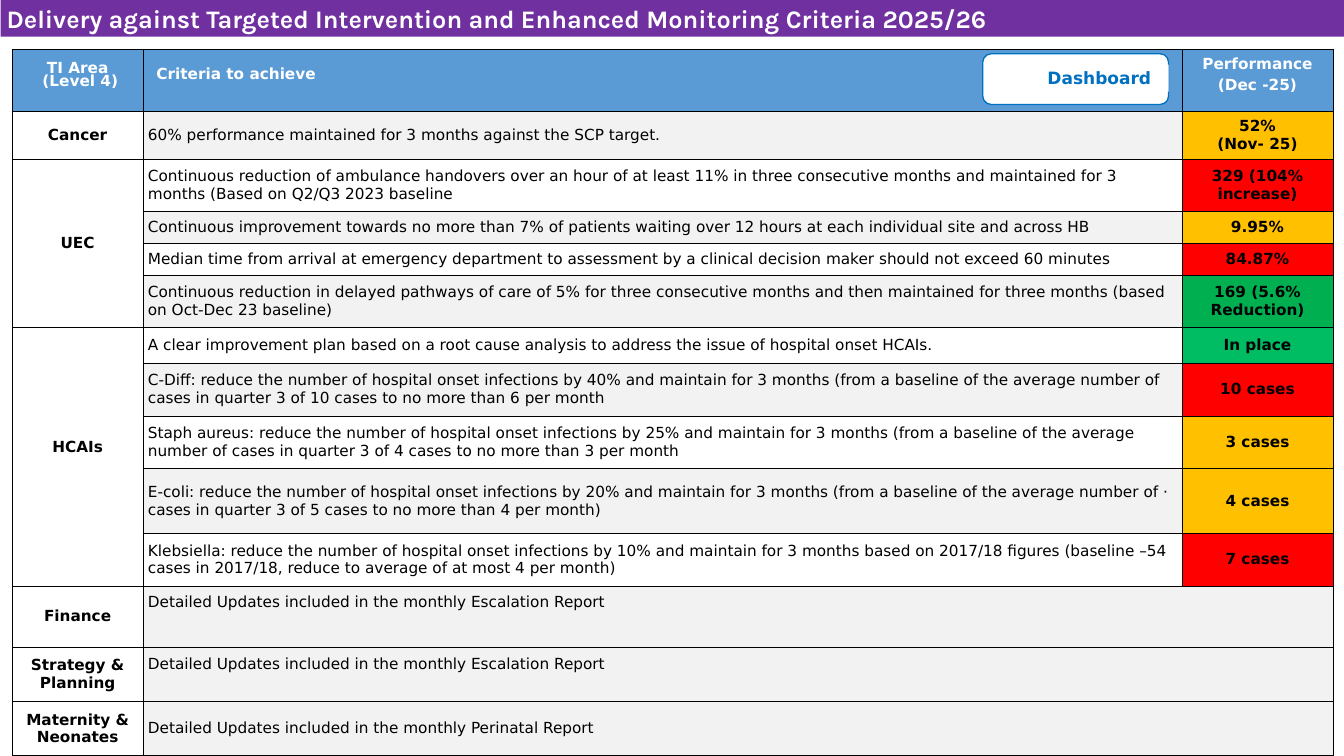
from dataclasses import dataclass
from typing import NamedTuple

from lxml.etree import SubElement
from pptx import Presentation
from pptx.dml.color import RGBColor
from pptx.enum.shapes import MSO_SHAPE
from pptx.enum.text import MSO_ANCHOR, MSO_AUTO_SIZE, PP_ALIGN
from pptx.oxml.ns import qn
from pptx.util import Inches, Pt


@dataclass(frozen=True)
class Theme:
    purple: str = "7030A0"
    header: str = "5B9BD5"
    blue: str = "0070C0"
    band: str = "F2F2F2"
    white: str = "FFFFFF"
    black: str = "000000"
    red: str = "FF0000"
    amber: str = "FFC000"
    green: str = "00B050"
    done: str = "00BC62"
    body_font: str = "DejaVu Sans"
    title_font: str = "Karla"
    body_size: float = 18
    button_size: float = 20
    title_size: float = 29.7


THEME = Theme()


class Criterion(NamedTuple):
    """One table row; a lift raises a text above the middle of its cell."""
    height: float
    area: str
    text: str
    result: str = ""
    status: str = ""
    area_lift: float = 0
    text_lift: float = 0


ESCALATION = "Detailed Updates included in the monthly Escalation Report"
CRITERIA = [
    Criterion(0.79, "Cancer", "60% performance maintained for 3 months against the SCP target.",
              "52%\n(Nov- 25)", THEME.amber),
    Criterion(0.85, "UEC", "Continuous reduction of ambulance handovers over an hour of at least 11% in three "
              "consecutive months and maintained for 3 months (Based on Q2/Q3 2023 baseline",
              "329 (104% increase)", THEME.red),
    Criterion(0.52, "", "Continuous improvement towards no more than 7% of patients waiting over 12 hours "
              "at each individual site and across HB", "9.95%", THEME.amber),
    Criterion(0.52, "", "Median time from arrival at emergency department to assessment by a clinical "
              "decision maker should not exceed 60 minutes", "84.87%", THEME.red),
    Criterion(0.85, "", "Continuous reduction in delayed pathways of care of 5% for three consecutive months "
              "and then maintained for three months (based on Oct-Dec 23 baseline)",
              "169 (5.6% Reduction)", THEME.green),
    Criterion(0.59, "HCAIs", "A clear improvement plan based on a root cause analysis to address the issue "
              "of hospital onset HCAIs.", "In place", THEME.done, area_lift=0.3),
    Criterion(0.87, "", "C-Diff: reduce the number of hospital onset infections by 40% and maintain for 3 months "
              "(from a baseline of the average number of cases in quarter 3 of 10 cases to no more than "
              "6 per month", "10 cases", THEME.red),
    Criterion(0.86, "", "Staph aureus: reduce the number of hospital onset infections by 25% and maintain for "
              "3 months (from a baseline of the average number of cases in quarter 3 of 4 cases to no more "
              "than 3 per month", "3 cases", THEME.amber),
    Criterion(1.06, "", "E-coli: reduce the number of hospital onset infections by 20% and maintain for 3 months "
              "(from a baseline of the average number of · cases in quarter 3 of 5 cases to no more than "
              "4 per month)", "4 cases", THEME.amber),
    Criterion(0.86, "", "Klebsiella: reduce the number of hospital onset infections by 10% and maintain for "
              "3 months based on 2017/18 figures (baseline –54 cases in 2017/18, reduce to average of at most "
              "4 per month)", "7 cases", THEME.red),
    Criterion(0.52, "Finance", ESCALATION),
    Criterion(0.48, "", ""),
    Criterion(0.89, "Strategy & Planning", ESCALATION, text_lift=0.32),
    Criterion(0.89, "Maternity & Neonates", "Detailed Updates included in the monthly Perinatal Report"),
]
COLUMN_WIDTHS = [2.14, 17, 2.47]
HEADER_HEIGHT = 1.02


def set_font(font, name, size, color, bold):
    for attribute, value in {"name": name, "size": Pt(size), "bold": bold}.items():
        setattr(font, attribute, value)
    font.color.rgb = RGBColor.from_string(color)


def set_fill(target, color):
    if color:
        target.fill.solid()
        target.fill.fore_color.rgb = RGBColor.from_string(color)
    else:
        target.fill.background()


def set_borders(cell, open_edge=""):
    """Draw a thin black line on each edge except the open one."""
    properties = cell._tc.get_or_add_tcPr()
    for edge in "LRTB":
        line = SubElement(properties, qn(f"a:ln{edge}"), w=str(Pt(1)))
        if edge == open_edge:
            SubElement(line, qn("a:noFill"))
        else:
            SubElement(SubElement(line, qn("a:solidFill")), qn("a:srgbClr"), val=THEME.black)


def write_cell(cell, text, fill, align=PP_ALIGN.CENTER, bold=True, color=THEME.black,
               insets=(0.08, 0.08), lift=0, para_format=None, gap=0):
    side, end = (Inches(inset) for inset in insets)
    layout = {"margin_left": side, "margin_right": side, "margin_top": end,
              "margin_bottom": end + Inches(lift), "vertical_anchor": MSO_ANCHOR.MIDDLE}
    for attribute, value in layout.items():
        setattr(cell, attribute, value)
    set_fill(cell, fill)
    cell.text = text
    for number, para in enumerate(cell.text_frame.paragraphs):
        para.alignment = align
        for attribute, value in (para_format or {}).items():
            setattr(para, attribute, value)
        if number and gap:
            para.space_before = Pt(gap)
        set_font(para.font, THEME.body_font, THEME.body_size, color, bold)


def add_header(table):
    headings = [("TI Area\n (Level 4)", PP_ALIGN.CENTER, 8),
                ("Criteria to achieve", PP_ALIGN.LEFT, 0),
                ("Performance\n(Dec -25)", PP_ALIGN.CENTER, 16)]
    for column, (text, align, gap) in enumerate(headings):
        cell = table.cell(0, column)
        set_borders(cell)
        write_cell(cell, text, THEME.header, align, color=THEME.white, insets=(0.22, 0.11),
                   para_format={"line_spacing": Pt(8)}, gap=gap)


def merge_areas(table):
    """Stretch each area label down to the row above the next label."""
    starts = [row for row, item in enumerate(CRITERIA, 1) if item.area]
    for first, following in zip(starts, starts[1:] + [len(CRITERIA) + 1]):
        if following - first > 1:
            table.cell(first, 0).merge(table.cell(following - 1, 0))


def add_criteria_row(table, row, item):
    area, criterion, result = (table.cell(row, column) for column in range(3))
    open_edge = ""
    if not item.text:
        open_edge = "T"
    elif row < len(CRITERIA) and not CRITERIA[row].text:
        open_edge = "B"
    set_borders(area)
    set_borders(criterion, open_edge)
    set_borders(result, open_edge)
    if item.area:
        write_cell(area, item.area, None, lift=item.area_lift)
    shaded = row % 2 or not item.result
    write_cell(criterion, item.text, THEME.band if shaded else None, PP_ALIGN.LEFT, bold=False,
               lift=item.text_lift)
    if item.result:
        write_cell(result, item.result, item.status)
    else:
        criterion.merge(result)


def add_criteria_table(page):
    heights = [HEADER_HEIGHT] + [item.height for item in CRITERIA]
    table = page.shapes.add_table(len(heights), len(COLUMN_WIDTHS), Inches(0.2), Inches(0.8),
                                  Inches(sum(COLUMN_WIDTHS)), Inches(sum(heights))).table
    for column, width in zip(table.columns, COLUMN_WIDTHS):
        column.width = Inches(width)
    for row, height in zip(table.rows, heights):
        row.height = Inches(height)
    add_header(table)
    for row, item in enumerate(CRITERIA, 1):
        add_criteria_row(table, row, item)
    merge_areas(table)


def add_panel(page, kind, place, fill, line=None):
    panel = page.shapes.add_shape(kind, *(Inches(length) for length in place))
    panel.shadow.inherit = False
    set_fill(panel, fill)
    set_fill(panel.line, line)
    if line:
        panel.line.width = Pt(1.5)
    return panel


def add_label(page, place, fill, text, align, font_name, size, color):
    frame = add_panel(page, MSO_SHAPE.RECTANGLE, place, fill).text_frame
    layout = {"word_wrap": True, "vertical_anchor": MSO_ANCHOR.TOP, "auto_size": MSO_AUTO_SIZE.SHAPE_TO_FIT_TEXT}
    for attribute, value in layout.items():
        setattr(frame, attribute, value)
    para = frame.paragraphs[0]
    para.alignment = align
    span = para.add_run()
    span.text = text
    set_font(span.font, font_name, size, color, True)


def main():
    deck = Presentation()
    deck.slide_width, deck.slide_height = Inches(21.99), Inches(12.37)
    page = deck.slides.add_slide(deck.slide_layouts[6])
    add_criteria_table(page)
    add_label(page, (0.01, 0, 21.99, 0.6), THEME.purple,
              "Delivery against Targeted Intervention and Enhanced Monitoring Criteria 2025/26",
              PP_ALIGN.JUSTIFY, THEME.title_font, THEME.title_size, THEME.white)
    add_panel(page, MSO_SHAPE.ROUNDED_RECTANGLE, (16.08, 0.88, 3.04, 0.83), THEME.white, THEME.blue)
    add_label(page, (17.04, 1.06, 2.08, 0.44), THEME.white, "Dashboard", PP_ALIGN.LEFT,
              THEME.body_font, THEME.button_size, THEME.blue)
    deck.save("out.pptx")


if __name__ == "__main__":
    main()
